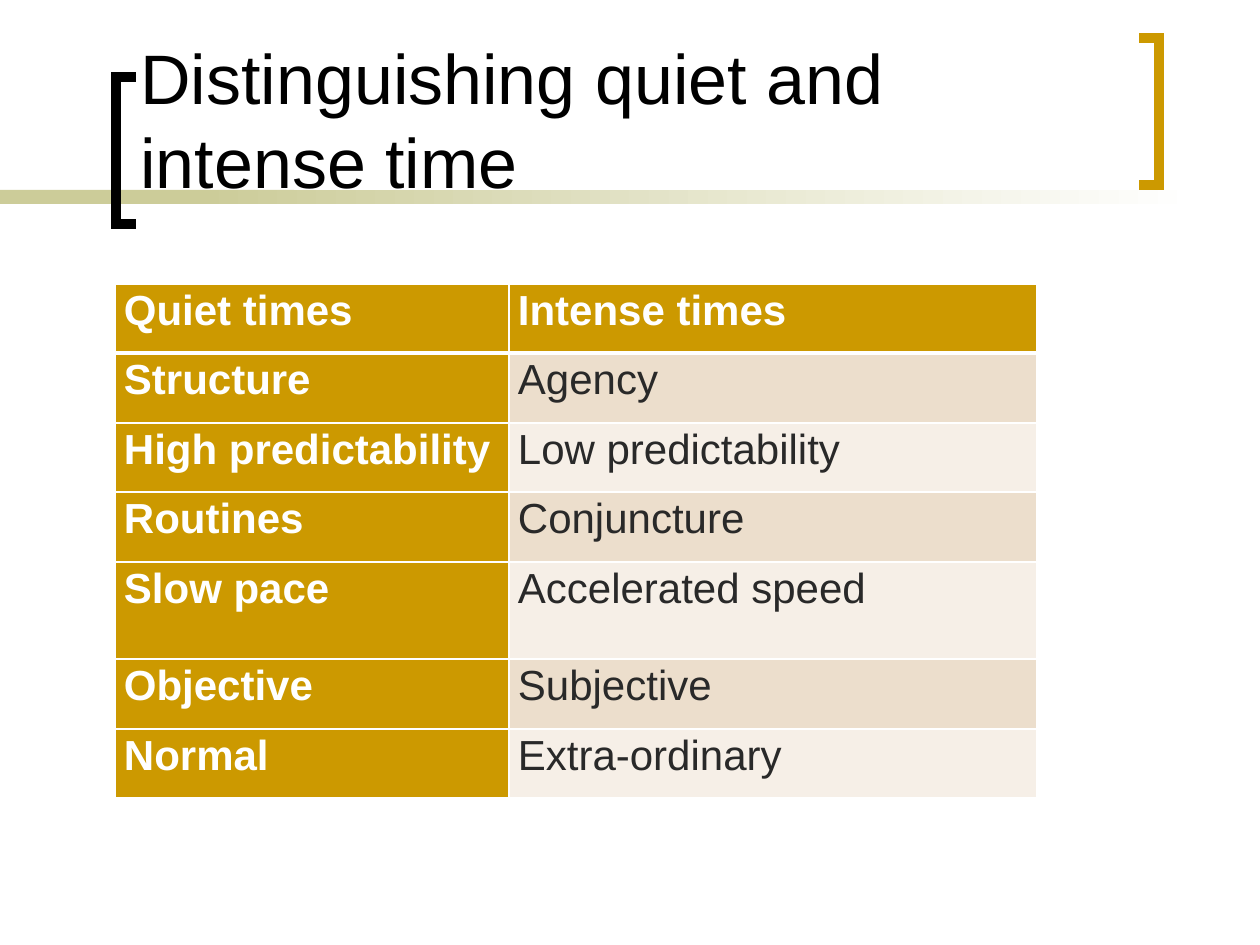
from lxml import etree
from pptx import Presentation
from pptx.dml.color import RGBColor
from pptx.enum.shapes import MSO_SHAPE
from pptx.enum.text import MSO_ANCHOR
from pptx.oxml.ns import qn
from pptx.util import Emu, Pt

RECT = MSO_SHAPE.RECTANGLE
BOTTOM = MSO_ANCHOR.BOTTOM

THEME = {
    "font": "Arial", "title_size": 40, "table_size": 24,
    "black": "000000", "white": "FFFFFF", "text": "292929",
    "gold": "CC9900", "olive": "CCCC99", "bands": ["ECDECC", "F6EFE7"],
}
SCALE = 914400 / 126


def px(n):
    return Emu(round(n * SCALE))


def style(p, size, color, bold=False):
    for r in p.runs:
        r.font.name = THEME["font"]
        r.font.size = Pt(THEME[size])
        r.font.bold = bold
        r.font.color.rgb = RGBColor.from_string(THEME[color])


prs = Presentation()
prs.slide_width, prs.slide_height = px(1260), px(945)
s = prs.slides.add_slide(prs.slide_layouts[6])
olive = RGBColor.from_string(THEME["olive"])
white = RGBColor.from_string(THEME["white"])

# Rule under the title: solid start, then a fade to white
solid = s.shapes.add_shape(RECT, 0, px(190), px(294), px(14))
solid.fill.solid()
solid.fill.fore_color.rgb = olive
fade = s.shapes.add_shape(RECT, px(199), px(190), px(998), px(14))
fade.fill.gradient()
fade.fill.gradient_angle = 0
for stop, position, color in zip(fade.fill.gradient_stops, (0, 1), (olive, white)):
    stop.position = position
    stop.color.rgb = color
for sp in (solid, fade):
    sp.line.fill.background()
    sp.shadow.inherit = False

# Brackets: tip x, spine x, top y, colour
for tip, spine, top, color in [(136, 116, 77, "black"), (1139, 1159, 38, "gold")]:
    bottom = top + 147
    fb = s.shapes.build_freeform(px(tip), px(top))
    fb.add_line_segments([(px(spine), px(top)), (px(spine), px(bottom)),
                          (px(tip), px(bottom))], close=False)
    sp = fb.convert_to_shape()
    sp.shadow.inherit = False
    sp.fill.background()
    sp.line.width = Pt(6)
    sp.line.color.rgb = RGBColor.from_string(THEME[color])
    etree.SubElement(sp.line._get_or_add_ln(), qn("a:miter"), lim="800000")

# Title
tf = s.shapes.add_textbox(px(128), px(14), px(987), px(195)).text_frame
tf.word_wrap = True
tf.vertical_anchor = BOTTOM
tf.text = "Distinguishing quiet and intense time"
style(tf.paragraphs[0], "title_size", "black")

# Comparison table
rows = [
    ("Quiet times", "Intense times"),
    ("Structure", "Agency"),
    ("High predictability", "Low predictability"),
    ("Routines", "Conjuncture"),
    ("Slow pace", "Accelerated speed"),
    ("Objective", "Subjective"),
    ("Normal", "Extra-ordinary"),
]
widths = [394, 528]
heights = [69, 70, 69, 70, 97, 70, 69]
table = s.shapes.add_table(len(rows), len(widths), px(115), px(284),
                           px(sum(widths)), px(sum(heights))).table
for column, width in zip(table.columns, widths):
    column.width = px(width)
for row, height in zip(table.rows, heights):
    row.height = px(height)

for i, texts in enumerate(rows):
    for j, text in enumerate(texts):
        heading = i == 0 or j == 0
        cell = table.cell(i, j)
        cell.margin_left = cell.margin_right = px(9)
        cell.margin_top = cell.margin_bottom = 0
        cell.text = text
        p = cell.text_frame.paragraphs[0]
        p.line_spacing = 1.07
        style(p, "table_size", "white" if heading else "text", heading)
        fill = THEME["gold"] if heading else THEME["bands"][(i - 1) % 2]
        cell.fill.solid()
        cell.fill.fore_color.rgb = RGBColor.from_string(fill)

        # White borders, thicker below the header row
        tcPr = cell._tc.get_or_add_tcPr()
        for k, side in enumerate(("lnL", "lnR", "lnT", "lnB")):
            thick = (i, side) in [(0, "lnB"), (1, "lnT")]
            ln = etree.Element(qn(f"a:{side}"), w=str(Pt(3 if thick else 1)))
            paint = etree.SubElement(ln, qn("a:solidFill"))
            etree.SubElement(paint, qn("a:srgbClr"), val=THEME["white"])
            tcPr.insert(k, ln)

prs.save("out.pptx")
